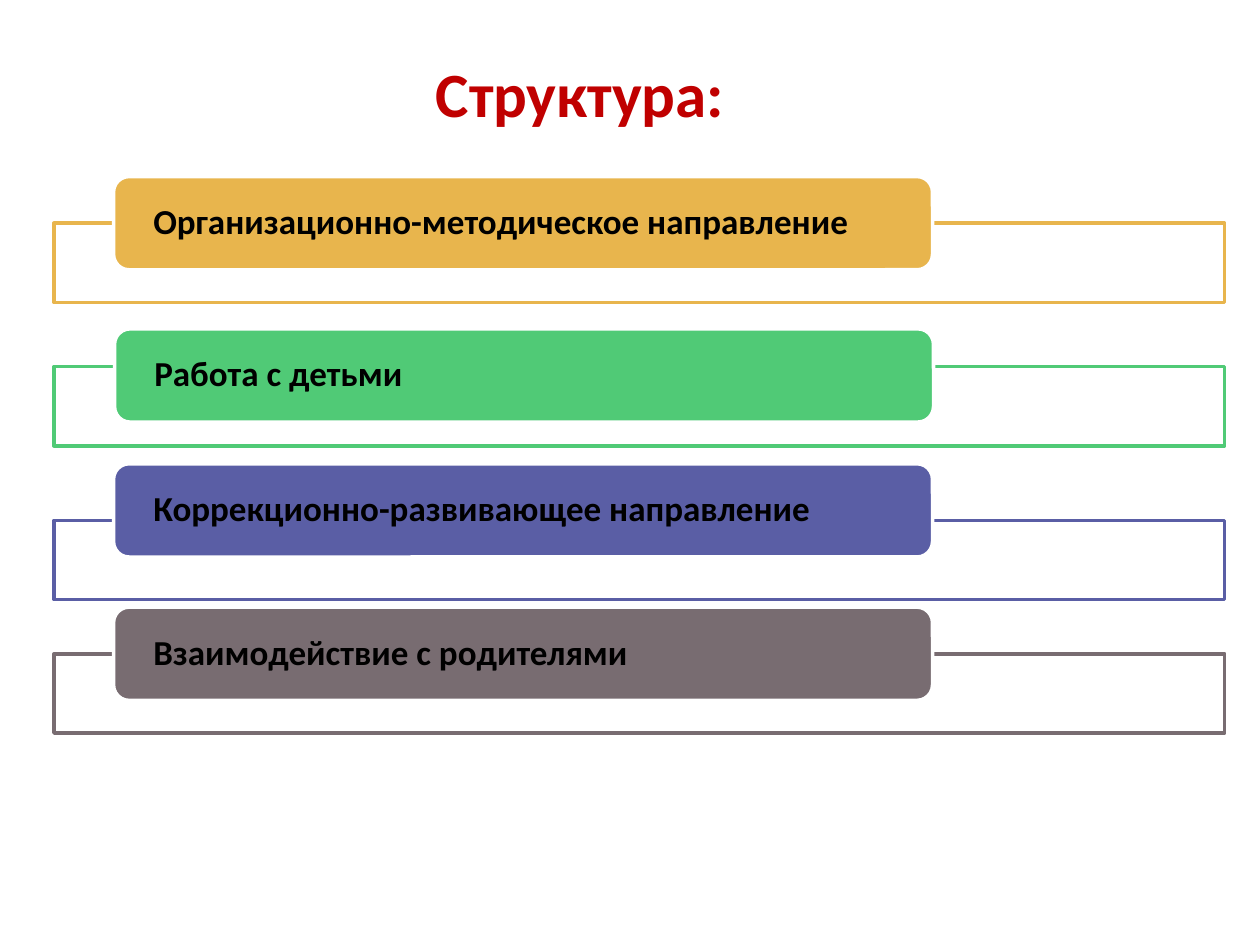
import dataclasses

import pptx
import pptx.dml.color
import pptx.enum.shapes
import pptx.enum.text
import pptx.oxml
import pptx.oxml.ns
import pptx.util

Cm = pptx.util.Cm
Pt = pptx.util.Pt
Kind = pptx.enum.shapes.MSO_SHAPE
Align = pptx.enum.text.PP_ALIGN
Anchor = pptx.enum.text.MSO_ANCHOR

FONT = "Calibri"
WHITE = "FFFFFF"


@dataclasses.dataclass
class Row:
    text: str
    hue: str
    frame: float
    pill: float
    left: float = 2.29


ROWS = [
    Row("Организационно-методическое направление", "E8B54D", 4.5, 3.56),
    Row("Работа с детьми", "50CA76", 7.39, 6.63, 2.31),
    Row("Коррекционно-развивающее направление", "5A5EA5", 10.49, 9.35),
    Row("Взаимодействие с родителями", "786C71", 13.18, 12.24),
]


def paint(color, code: str) -> None:
    color.rgb = pptx.dml.color.RGBColor.from_string(code)


def fade(shape, share: int) -> None:
    tag = pptx.oxml.ns.qn("a:srgbClr")
    tint = next(shape.fill._xPr.iter(tag))
    space = pptx.oxml.ns.nsdecls("a")
    tint.append(pptx.oxml.parse_xml(f'<a:alpha {space} val="{share * 1000}"/>'))


def draw(slide, kind, box: tuple, fill: str, line: str = ""):
    shape = slide.shapes.add_shape(kind, *map(Cm, box))
    shape.shadow.inherit = False
    shape.fill.solid()
    paint(shape.fill.fore_color, fill)
    if line:
        paint(shape.line.color, line)
        shape.line.width = Pt(2)
    else:
        shape.line.fill.background()
    return shape


def write(shape, text: str, size: int, code: str, align):
    frame = shape.text_frame
    frame.text = text
    frame.word_wrap = True
    para = frame.paragraphs[0]
    para.alignment = align
    font = para.runs[0].font
    font.name, font.size, font.bold = FONT, Pt(size), True
    paint(font.color, code)
    return frame


def add_row(slide, row: Row) -> None:
    box = (1.09, row.frame, 23.6, 1.6)
    fade(draw(slide, Kind.RECTANGLE, box, WHITE, row.hue), 90)

    box = (row.left, row.pill, 16.51, 1.88)
    pill = draw(slide, Kind.ROUNDED_RECTANGLE, box, row.hue, WHITE)
    frame = write(pill, row.text, 20, "000000", Align.LEFT)
    frame.vertical_anchor = Anchor.MIDDLE
    frame.margin_left = frame.margin_right = Cm(0.71)
    frame.margin_top = frame.margin_bottom = Cm(0)
    frame.paragraphs[0].line_spacing = 0.9


def main() -> None:
    deck = pptx.Presentation()
    deck.slide_width, deck.slide_height = Cm(25.4), Cm(19.05)
    slide = deck.slides.add_slide(deck.slide_layouts[6])

    sheet = draw(slide, Kind.ROUNDED_RECTANGLE, (0.25, 0.28, 24.89, 18.52), WHITE)
    sheet.adjustments[0] = 0.02

    title = slide.shapes.add_textbox(Cm(2.92), Cm(0.97), Cm(17.55), Cm(4.11))
    write(title, "Структура:", 36, "C00000", Align.CENTER)

    for row in ROWS:
        add_row(slide, row)
    deck.save("out.pptx")


if __name__ == "__main__":
    main()
